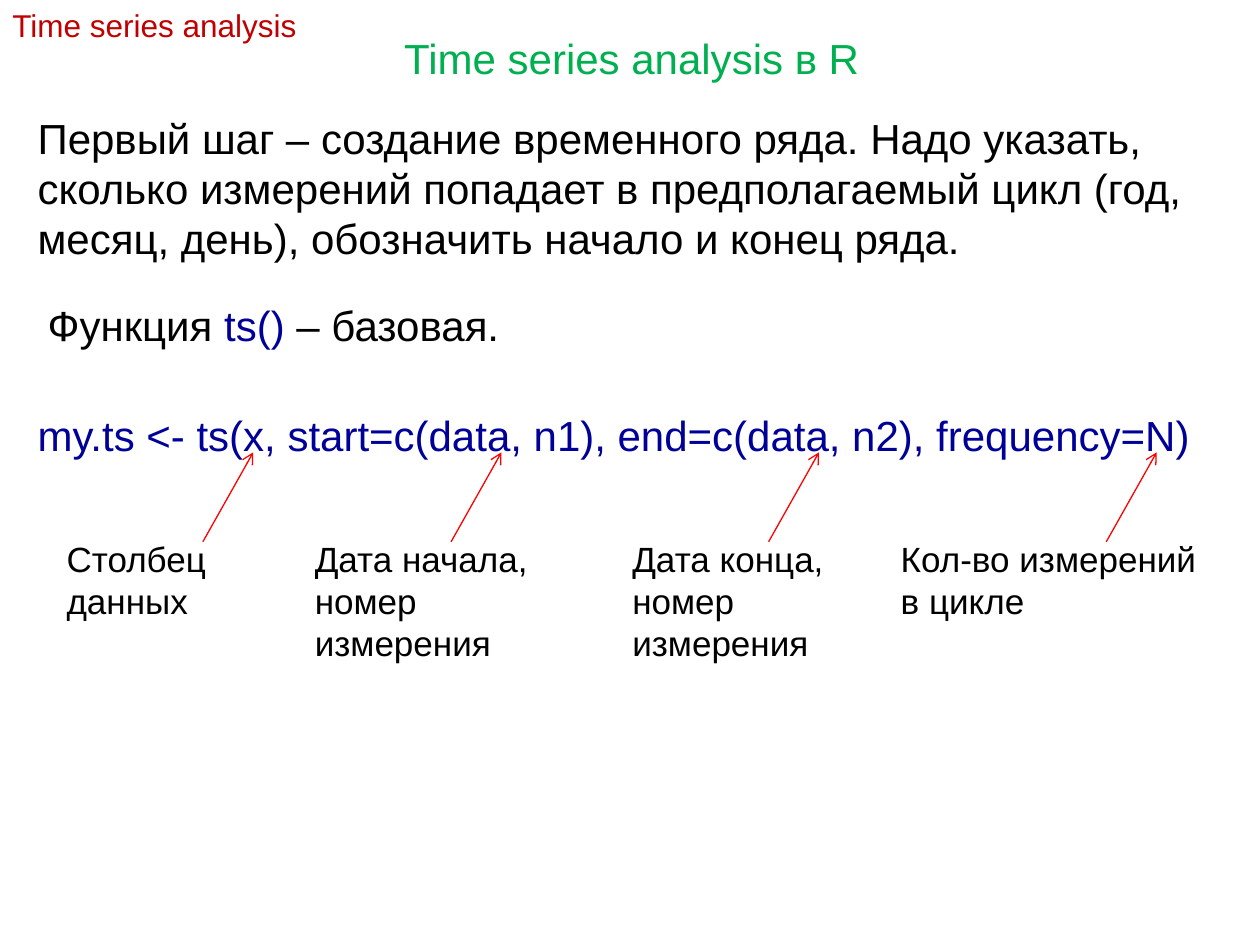
"""Build a slide on creating a time series in R with ts()."""
from lxml import etree
from pptx import Presentation
from pptx.dml.color import RGBColor
from pptx.enum.shapes import MSO_CONNECTOR
from pptx.enum.text import MSO_AUTO_SIZE
from pptx.oxml.ns import qn
from pptx.util import Inches, Pt

STRAIGHT = MSO_CONNECTOR.STRAIGHT
FIT_SHAPE = MSO_AUTO_SIZE.SHAPE_TO_FIT_TEXT
DARK_RED = RGBColor(0xC0, 0x00, 0x00)
GREEN = RGBColor(0x00, 0xB0, 0x50)
BLACK = RGBColor(0x00, 0x00, 0x00)
NAVY = RGBColor(0x00, 0x00, 0x99)
RED = RGBColor(0xFF, 0x00, 0x00)


def add_text(slide, left, top, width, height, size, spans, wrap=True):
    box = slide.shapes.add_textbox(Inches(left), Inches(top), Inches(width), Inches(height))
    frame = box.text_frame
    frame.word_wrap = wrap
    frame.auto_size = FIT_SHAPE
    for text, color in spans:
        span = frame.paragraphs[0].add_run()
        span.text = text
        span.font.name = "Arial"
        span.font.size = Pt(size)
        span.font.color.rgb = color


def add_arrow(slide, start_x, start_y, end_x, end_y):
    arrow = slide.shapes.add_connector(
        STRAIGHT, Inches(start_x), Inches(start_y), Inches(end_x), Inches(end_y))
    arrow.line.color.rgb = RED
    arrow.line.width = Pt(0.75)
    etree.SubElement(arrow.line._get_or_add_ln(), qn("a:tailEnd"), type="arrow")
    etree.SubElement(arrow._element.spPr, qn("a:effectLst"))


deck = Presentation()
deck.slide_width = Inches(10)
deck.slide_height = Inches(7.5)
page = deck.slides.add_slide(deck.slide_layouts[6])

add_text(page, 0, 0, 2.48, 0.4, 18, [("Time series analysis", DARK_RED)], wrap=False)
add_text(page, 3.11, 0.21, 3.85, 0.5, 24, [("Time series analysis в R", GREEN)], wrap=False)
add_text(page, 0.2, 0.84, 9.61, 1.31, 24, [(
    "Первый шаг – создание временного ряда. Надо указать, сколько измерений "
    "попадает в предполагаемый цикл (год, месяц, день), обозначить начало и конец ряда.",
    BLACK)])
add_text(page, 0.28, 2.33, 3.82, 0.5, 24,
         [("Функция ", BLACK), ("ts() ", NAVY), ("– базовая.", BLACK)], wrap=False)
add_text(page, 0.2, 3.2, 9.38, 0.5, 24,
         [("my.ts <- ts(x, start=c(data, n1), end=c(data, n2), frequency=N)", NAVY)], wrap=False)

arguments = [
    ("Столбец данных", 0.43, 1.81, 0.77, 1.61),
    ("Дата начала, номер измерения", 2.4, 1.97, 1.11, 3.58),
    ("Дата конца, номер измерения", 4.92, 1.97, 1.11, 6.1),
    ("Кол-во измерений в цикле", 7.05, 2.68, 0.77, 8.78),
]
for label, left, width, height, arrow_x in arguments:
    add_arrow(page, arrow_x, 4.3, arrow_x + 0.4, 3.59)
    add_text(page, left, 4.22, width, height, 20, [(label, BLACK)])

deck.save("out.pptx")
